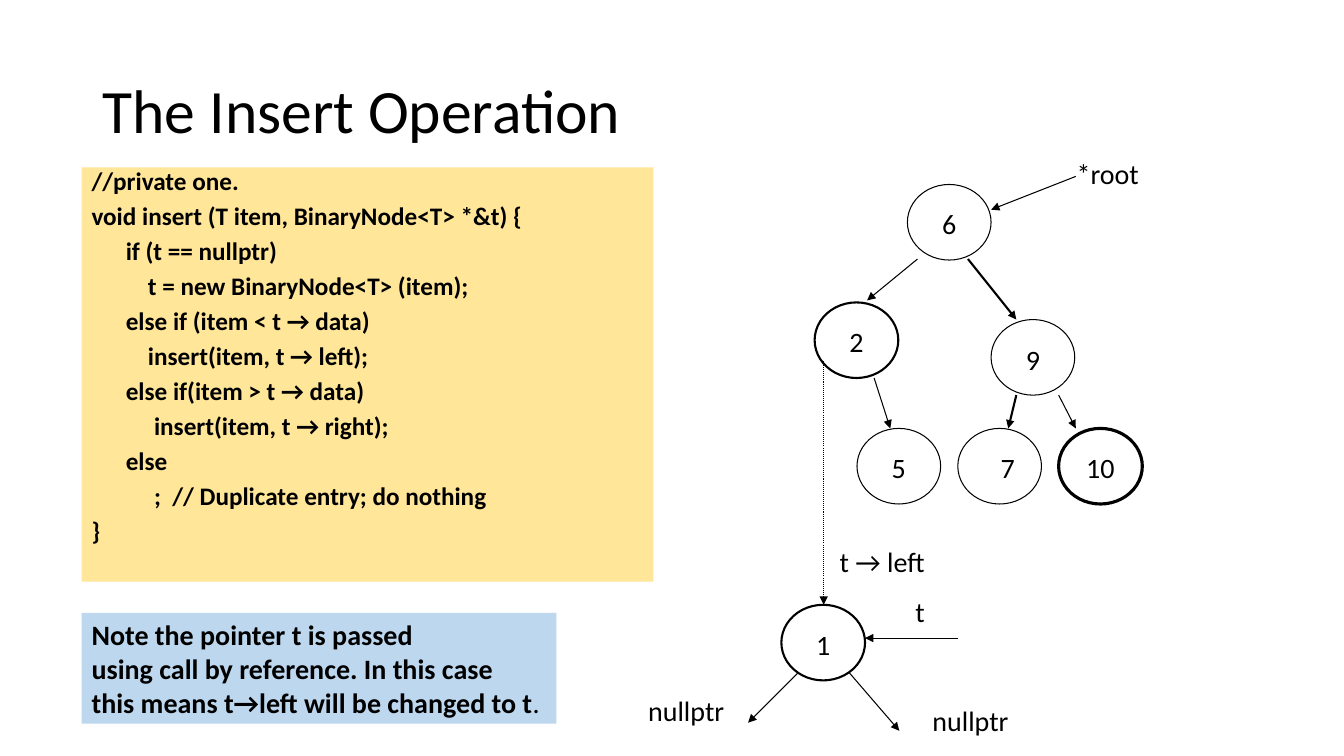
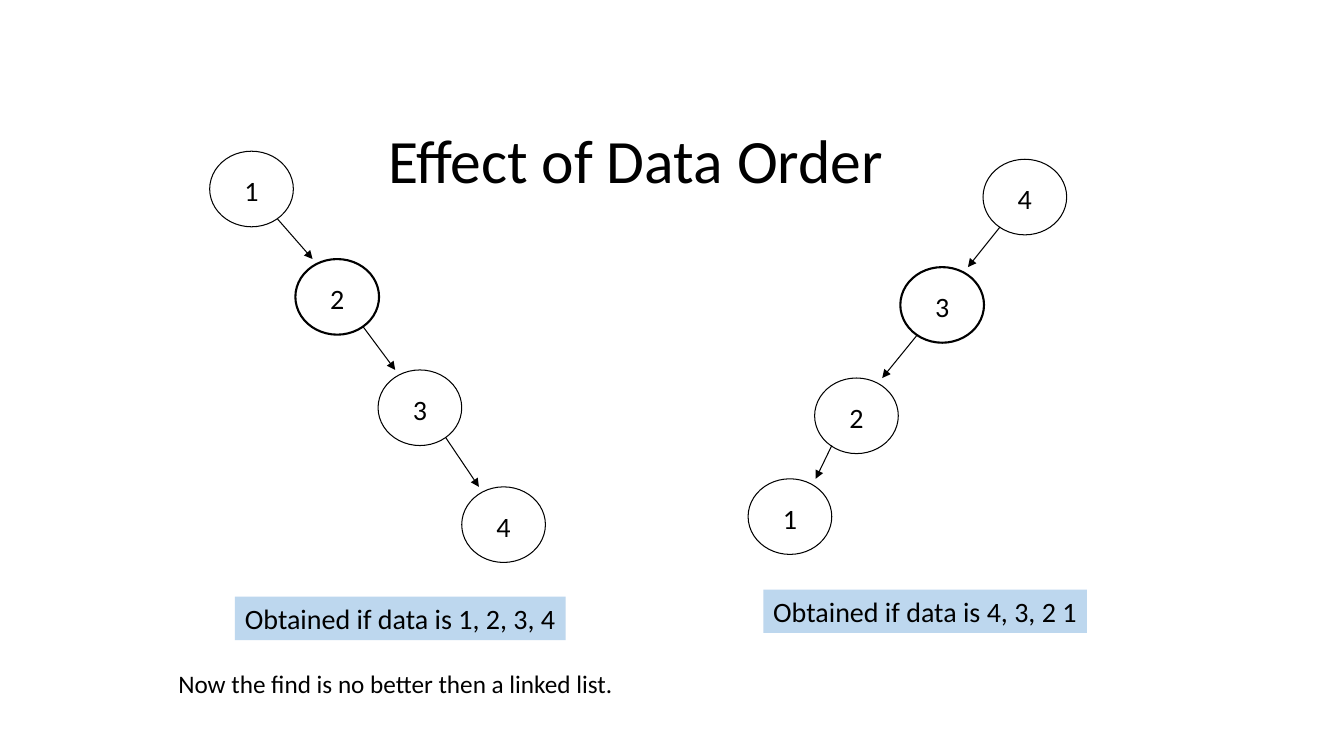
"""Build two slides on inserting into a binary search tree."""
from dataclasses import dataclass
from itertools import pairwise
from typing import Any

import lxml.etree
import pptx
import pptx.dml.color
import pptx.enum.dml
import pptx.enum.shapes
import pptx.enum.text
import pptx.oxml.ns
import pptx.util

Inches = pptx.util.Inches
Pt = pptx.util.Pt
ANCHOR = pptx.enum.text.MSO_ANCHOR
Point = tuple[float, float]
Box = tuple[float, float, float, float]


@dataclass(frozen=True)
class Theme:
    font: str = "Calibri"
    ink: str = "000000"
    code_fill: str = "FFE699"
    note_fill: str = "BDD7EE"
    title_size: float = 44
    label_size: float = 20
    small_size: float = 18
    thin: float = 0.75
    medium: float = 1.5
    thick: float = 2.25
    node_width: float = 0.83
    node_height: float = 0.75


THEME = Theme()


@dataclass(frozen=True)
class Line:
    text: str
    indent: float = 0
    plain_end: str = ""


@dataclass(frozen=True)
class TextStyle:
    size: float = THEME.label_size
    bold: bool = False
    line_spacing: float = 1.0
    space_before: float = 0


@dataclass(frozen=True)
class Label:
    text: str
    box: Box


@dataclass(frozen=True)
class Node:
    key: str
    left: float
    top: float
    weight: float = THEME.thin
    key_shift: float = 0


@dataclass(frozen=True)
class Arrow:
    start: Point
    end: Point
    weight: float = THEME.thin
    dotted: bool = False


TITLE = TextStyle(THEME.title_size, line_spacing=0.9)
PLAIN = TextStyle()
SMALL = TextStyle(THEME.small_size)
NOTE = TextStyle(bold=True)
CODE = TextStyle(THEME.small_size, True, 0.75, 8.75)

INSERT_CODE = (
    Line("//private one."),
    Line("void insert (T item, BinaryNode<T> *&t) {"),
    Line("if (t == nullptr)", 0.34),
    Line("t = new BinaryNode<T> (item);", 0.56),
    Line("else if (item < t → data)", 0.34),
    Line("insert(item, t → left);", 0.56),
    Line("else if(item > t → data)", 0.34),
    Line("insert(item, t → right);", 0.62),
    Line("else", 0.34),
    Line(";  // Duplicate entry; do nothing", 0.62),
    Line("}"),
)
REFERENCE_NOTE = (
    Line("Note the pointer t is passed"),
    Line("using call by reference. In this case"),
    Line("this means t→left will be changed to t", plain_end="."),
)
INSERT_NODES = (
    Node("6", 9, 1.83),
    Node("2", 8.08, 3, THEME.medium),
    Node("9", 9.83, 3.17),
    Node("5", 8.5, 4.25),
    Node("7", 9.5, 4.25, key_shift=0.08),
    Node("10", 10.5, 4.25, THEME.thick),
    Node("1", 7.75, 6, THEME.medium),
)
INSERT_ARROWS = (
    Arrow((10.67, 1.75), (9.83, 2.08)),
    Arrow((9.1, 2.57), (8.6, 2.98)),
    Arrow((9.6, 2.57), (10.08, 3.17), THEME.medium),
    Arrow((8.67, 3.75), (8.83, 4.25)),
    Arrow((10.08, 3.92), (10, 4.25), THEME.medium),
    Arrow((10.5, 3.92), (10.67, 4.25)),
    Arrow((8.17, 3.58), (8.17, 6), dotted=True),
    Arrow((7.92, 6.67), (7.42, 7.17)),
    Arrow((8.42, 6.67), (8.92, 7.25)),
    Arrow((9.5, 6.33), (8.58, 6.33)),
)
INSERT_LABELS = (
    Label("*root", (10.58, 1.5, 0.83, 0.44)),
    Label("t → left", (8.23, 5.35, 1.08, 0.44)),
    Label("t", (8.98, 5.85, 0.3, 0.44)),
    Label("nullptr", (6.33, 6.83, 0.97, 0.44)),
    Label("nullptr", (9.15, 6.93, 0.97, 0.44)),
)
ASCENDING_CHAIN = (
    Node("1", 2.08, 1.5),
    Node("2", 2.93, 2.57, THEME.medium),
    Node("3", 3.75, 3.67),
    Node("4", 4.58, 4.83),
)
DESCENDING_CHAIN = (
    Node("4", 9.75, 1.58),
    Node("3", 8.93, 2.65, THEME.medium),
    Node("2", 8.08, 3.75),
    Node("1", 7.42, 4.75),
)
CHAIN_CAPTIONS = (
    Label("Obtained if data is 1, 2, 3, 4", (2.33, 5.92, 3.28, 0.43)),
    Label("Obtained if data is 4, 3, 2 1", (7.57, 5.85, 3.21, 0.43)),
)


def color(value: str) -> Any:
    """Turn a hex string into a colour."""
    return pptx.dml.color.RGBColor.from_string(value)


def apply_format(target: Any, values: dict[str, Any]) -> None:
    """Set each named attribute on the target."""
    for name, value in values.items():
        setattr(target, name, value)


def add_run(paragraph: Any, text: str, size: float, bold: bool) -> None:
    """Append a run in the theme font."""
    run = paragraph.add_run()
    run.text = text
    apply_format(run.font, {"name": THEME.font, "size": Pt(size), "bold": bold})
    run.font.color.rgb = color(THEME.ink)


def write_lines(frame: Any, lines: tuple[Line, ...], style: TextStyle) -> None:
    """Write one paragraph per line."""
    for index, line in enumerate(lines):
        paragraph = frame.add_paragraph() if index else frame.paragraphs[0]
        apply_format(paragraph, {
            "line_spacing": style.line_spacing,
            "space_before": Pt(style.space_before if index else 0),
        })
        if line.indent:
            properties = paragraph._p.get_or_add_pPr()
            properties.set("marL", str(Inches(line.indent)))
            properties.set("indent", "0")
        add_run(paragraph, line.text, style.size, style.bold)
        if line.plain_end:
            add_run(paragraph, line.plain_end, style.size, False)


def add_text(slide: Any, box: Box, lines: tuple[Line, ...], style: TextStyle,
             fill: str = "", anchor: Any = ANCHOR.TOP, wrap: bool = False) -> None:
    """Place a text block, filled if a colour is given."""
    block = slide.shapes.add_textbox(*map(Inches, box))
    if fill:
        block.fill.solid()
        block.fill.fore_color.rgb = color(fill)
    apply_format(block.text_frame, {"word_wrap": wrap, "vertical_anchor": anchor})
    write_lines(block.text_frame, lines, style)


def add_title(slide: Any, title: Label) -> None:
    """Write the slide title."""
    add_text(slide, title.box, (Line(title.text),), TITLE,
             anchor=ANCHOR.MIDDLE, wrap=True)


def add_node(slide: Any, node: Node) -> None:
    """Draw a tree node with its key."""
    circle = slide.shapes.add_shape(
        pptx.enum.shapes.MSO_SHAPE.OVAL,
        Inches(node.left), Inches(node.top),
        Inches(THEME.node_width), Inches(THEME.node_height))
    circle.shadow.inherit = False
    circle.fill.background()
    circle.line.color.rgb = color(THEME.ink)
    circle.line.width = Pt(node.weight)
    apply_format(circle.text_frame, {
        "margin_left": Inches(2 * node.key_shift),
        "margin_right": 0,
        "margin_top": Inches(0.03),
        "margin_bottom": 0,
        "word_wrap": False,
        "vertical_anchor": ANCHOR.MIDDLE,
    })
    write_lines(circle.text_frame, (Line(node.key),), PLAIN)
    circle.text_frame.paragraphs[0].alignment = pptx.enum.text.PP_ALIGN.CENTER


def add_arrow(slide: Any, arrow: Arrow) -> None:
    """Draw a pointer with a triangular head."""
    pointer = slide.shapes.add_connector(
        pptx.enum.shapes.MSO_CONNECTOR.STRAIGHT,
        *map(Inches, arrow.start + arrow.end))
    pointer.line.color.rgb = color(THEME.ink)
    pointer.line.width = Pt(arrow.weight)
    if arrow.dotted:
        pointer.line.dash_style = pptx.enum.dml.MSO_LINE.ROUND_DOT
    qn = pptx.oxml.ns.qn
    properties = pointer.element.spPr
    lxml.etree.SubElement(properties.find(qn("a:ln")), qn("a:tailEnd"), type="triangle")
    lxml.etree.SubElement(properties, qn("a:effectLst"))


def add_chain(slide: Any, chain: tuple[Node, ...]) -> None:
    """Draw nodes linked one to the next."""
    for node in chain:
        add_node(slide, node)
    for parent, child in pairwise(chain):
        leave, enter = (0.67, 0.17) if child.left > parent.left else (0.17, 0.67)
        add_arrow(slide, Arrow((parent.left + leave, parent.top + 0.67),
                               (child.left + enter, child.top)))


def build_insert(slide: Any) -> None:
    """Show the insert code beside its tree."""
    add_title(slide, Label("The Insert Operation", (0.92, 0.4, 11.5, 1.45)))
    add_text(slide, (0.81, 1.66, 5.67, 4.11), INSERT_CODE, CODE,
             THEME.code_fill, wrap=True)
    add_text(slide, (0.81, 6.08, 4.71, 1.1), REFERENCE_NOTE, NOTE, THEME.note_fill)
    for node in INSERT_NODES:
        add_node(slide, node)
    for arrow in INSERT_ARROWS:
        add_arrow(slide, arrow)
    for label in INSERT_LABELS:
        add_text(slide, label.box, (Line(label.text),), PLAIN)


def build_order(slide: Any) -> None:
    """Show the chains that sorted data gives."""
    add_title(slide, Label("Effect of Data Order", (3.75, 1, 5.58, 1.25)))
    for chain in (ASCENDING_CHAIN, DESCENDING_CHAIN):
        add_chain(slide, chain)
    for caption in CHAIN_CAPTIONS:
        add_text(slide, caption.box, (Line(caption.text),), PLAIN, THEME.note_fill)
    add_text(slide, (1.67, 6.58, 4.63, 0.4),
             (Line("Now the find is no better then a linked list."),), SMALL)


def main() -> None:
    """Build and save the presentation."""
    deck = pptx.Presentation()
    apply_format(deck, {"slide_width": Inches(13.33), "slide_height": Inches(7.5)})
    for build in (build_insert, build_order):
        build(deck.slides.add_slide(deck.slide_layouts[6]))
    deck.save("out.pptx")


if __name__ == "__main__":
    main()
